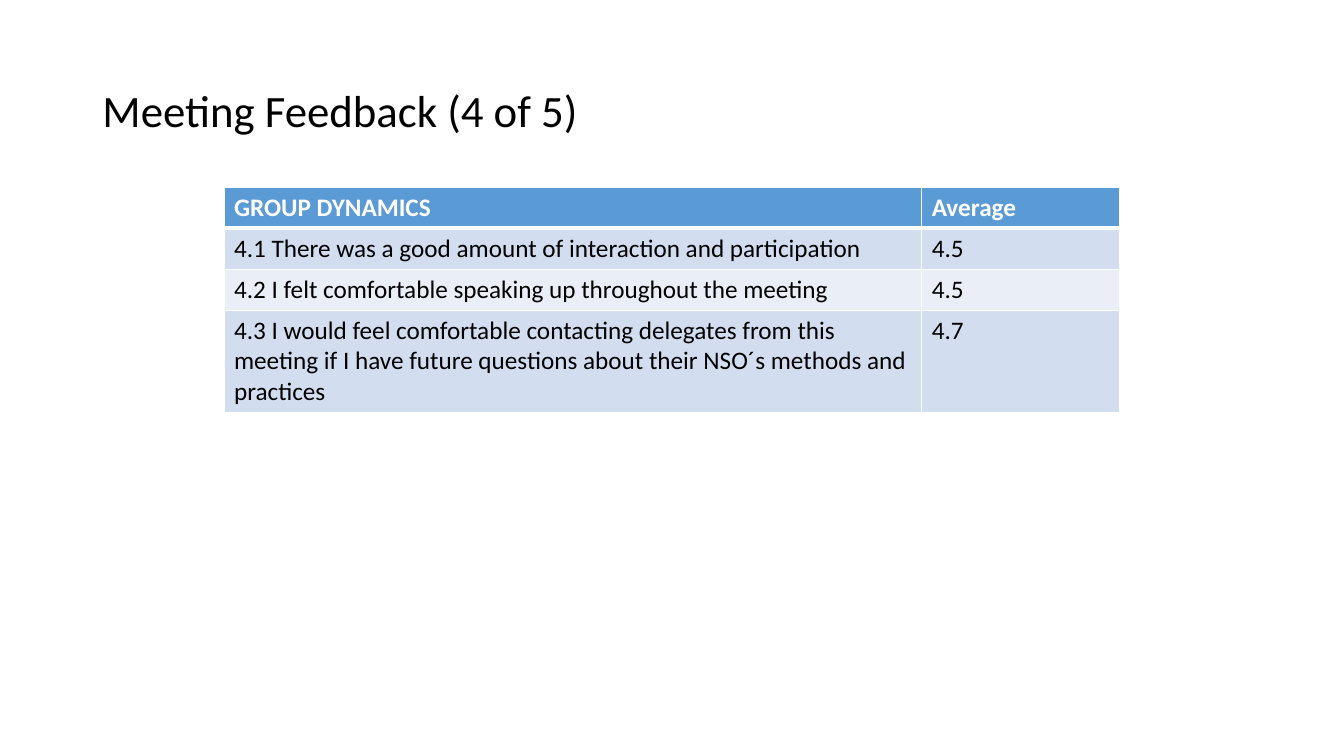
from lxml.etree import SubElement
from pptx import Presentation
from pptx.dml.color import RGBColor
from pptx.enum.text import MSO_ANCHOR as Anchor, MSO_AUTO_SIZE as Fit, PP_ALIGN as Align
from pptx.oxml.ns import qn
from pptx.util import Inches, Pt

BLACK = RGBColor(0x00, 0x00, 0x00)
WHITE = RGBColor(0xFF, 0xFF, 0xFF)
BLUE = RGBColor(0x5B, 0x9B, 0xD5)
BANDS = RGBColor(0xD2, 0xDE, 0xEF), RGBColor(0xEA, 0xEF, 0xF7)

SCORES = [
    ("GROUP DYNAMICS", "Average"),
    ("4.1 There was a good amount of interaction and participation", "4.5"),
    ("4.2 I felt comfortable speaking up throughout the meeting", "4.5"),
    ("4.3 I would feel comfortable contacting delegates from this meeting "
     "if I have future questions about their NSO´s methods and practices", "4.7"),
]


class Board:
    """A slide on a grid of 24 columns by 24 rows."""
    font = "Calibri"
    grid = 24

    def __init__(self, deck):
        self.col = deck.slide_width / self.grid
        self.row = deck.slide_height / self.grid
        self.slide = deck.slides.add_slide(deck.slide_layouts[5])

    def place(self, x, y, w, h):
        return [round(n) for n in (x * self.col, y * self.row, w * self.col, h * self.row)]

    def add_text(self, para, text, size, color, bold=False):
        run = para.add_run()
        run.text = text
        font = run.font
        font.name, font.size, font.bold = self.font, Pt(size), bold
        font.color.rgb = color

    def title(self, text, *box):
        shape = self.slide.shapes.title
        shape.left, shape.top, shape.width, shape.height = self.place(*box)
        frame = shape.text_frame
        frame.auto_size, frame.word_wrap = Fit.NONE, True
        frame.vertical_anchor = Anchor.MIDDLE
        para = frame.paragraphs[0]
        para.alignment, para.line_spacing = Align.LEFT, 0.9
        self.add_text(para, text, 32, BLACK)

    def edge(self, cell, side, width):
        line = SubElement(cell._tc.get_or_add_tcPr(), qn(f"a:ln{side}"), w=str(Pt(width)))
        fill = SubElement(line, qn("a:solidFill"))
        SubElement(fill, qn("a:srgbClr"), val=str(WHITE))

    def table(self, data, x, y, widths, height):
        """Draw a header row and banded rows, each at least height tall."""
        box = self.place(x, y, sum(widths), height * len(data))
        table = self.slide.shapes.add_table(len(data), len(widths), *box).table
        for col, width in zip(table.columns, widths):
            col.width = round(width * self.col)
        for r, texts in enumerate(data):
            head = r == 0
            table.rows[r].height = round(height * self.row)
            for c, text in enumerate(texts):
                cell = table.cell(r, c)
                thick = {"L": 1, "R": 1, "T": 3 if r == 1 else 1, "B": 3 if head else 1}
                for side, width in thick.items():
                    self.edge(cell, side, width)
                cell.fill.solid()
                cell.fill.fore_color.rgb = BLUE if head else BANDS[(r - 1) % 2]
                para = cell.text_frame.paragraphs[0]
                self.add_text(para, text, 18, WHITE if head else BLACK, head)


def main():
    deck = Presentation()
    deck.slide_width, deck.slide_height = Inches(13.33), Inches(7.5)
    board = Board(deck)
    board.title("Meeting Feedback (4 of 5)", 1.65, 1.28, 20.7, 4.64)
    board.table(SCORES, 4, 5.95, (12.46, 3.54), 1.3)
    deck.save("out.pptx")


if __name__ == "__main__":
    main()
